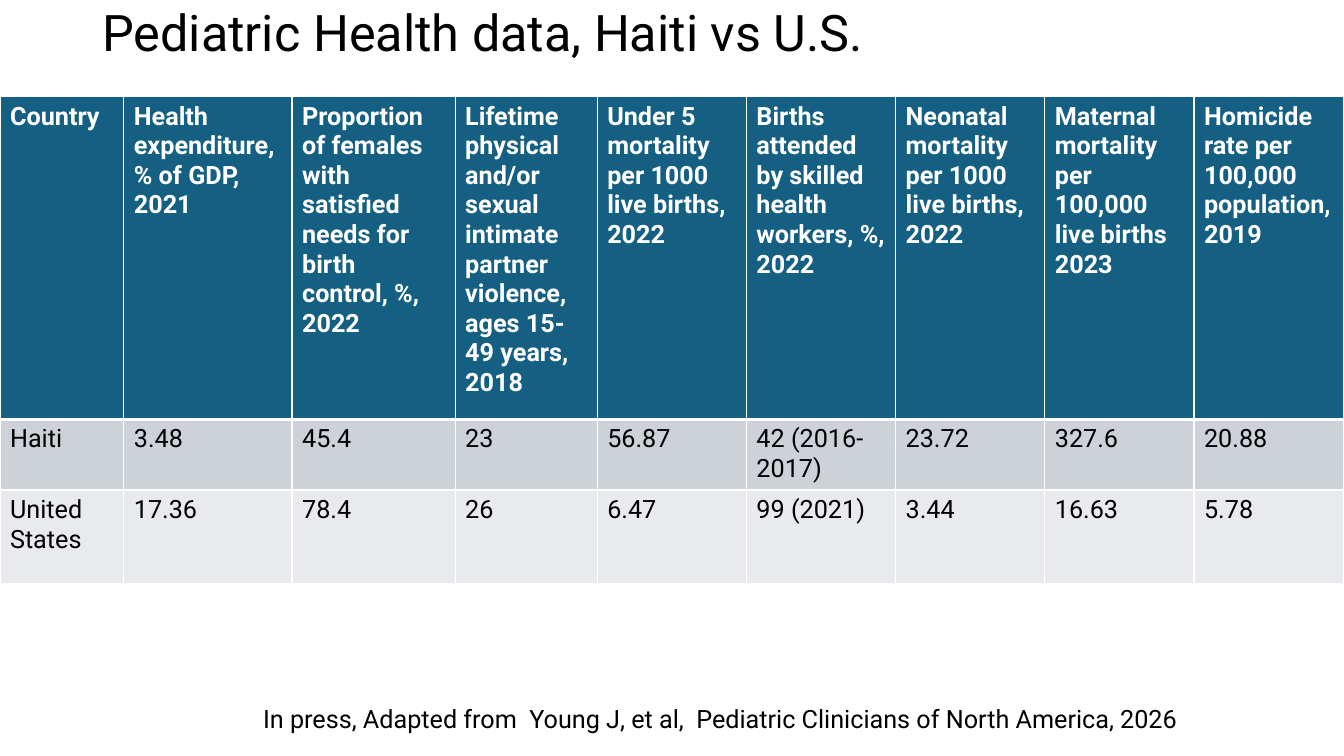
from lxml.etree import SubElement
from pptx import Presentation
from pptx.dml.color import RGBColor
from pptx.enum.text import MSO_ANCHOR
from pptx.oxml.ns import qn
from pptx.util import Cm, Pt

FONT = "Roboto"
BLACK, WHITE = "000000", "FFFFFF"
HEADER_FILL = "156082"
COUNTRY_FILLS = ["CCD2D8", "E8EAED"]
COLUMN_WIDTHS = [3.12, 4.24, 4.11, 3.58] + [3.76] * 5
ROW_HEIGHTS = [8.13, 1.37, 2.36]
INDICATORS = [
    "Country",
    "Health expenditure, % of GDP, 2021",
    "Proportion of females with satisfied needs for birth control, %, 2022",
    "Lifetime physical and/or sexual intimate partner violence, ages 15-49 years, 2018",
    "Under 5 mortality per 1000 live births, 2022",
    "Births attended by skilled health workers, %, 2022",
    "Neonatal mortality per 1000 live births, 2022",
    "Maternal mortality per 100,000 live births 2023",
    "Homicide rate per 100,000 population, 2019",
]
COUNTRIES = [
    ["Haiti", "3.48", "45.4", "23", "56.87", "42 (2016-2017)", "23.72", "327.6", "20.88"],
    ["United States", "17.36", "78.4", "26", "6.47", "99 (2021)", "3.44", "16.63", "5.78"],
]


def rgb(value):
    """Return the colour for a hex string."""
    return RGBColor.from_string(value)


def style(paragraph, size, color, bold=False):
    """Set the font of a whole paragraph."""
    font = paragraph.font
    font.name, font.size, font.bold = FONT, Pt(size), bold
    font.color.rgb = rgb(color)


def add_text(slide, text, left, top, width, height, size, anchor=MSO_ANCHOR.TOP, spacing=1.0):
    """Add a wrapped one-paragraph text box."""
    frame = slide.shapes.add_textbox(Cm(left), Cm(top), Cm(width), Cm(height)).text_frame
    frame.word_wrap = True
    frame.vertical_anchor = anchor
    paragraph = frame.paragraphs[0]
    paragraph.text = text
    paragraph.line_spacing = spacing
    style(paragraph, size, BLACK)


def add_borders(cell, top, bottom):
    """Draw white borders, with the given top and bottom weights in points."""
    properties = cell._tc.get_or_add_tcPr()
    weights = {"a:lnL": 1, "a:lnR": 1, "a:lnT": top, "a:lnB": bottom}
    for position, (side, weight) in enumerate(weights.items()):
        border = SubElement(properties, qn(side), w=str(Pt(weight)))
        SubElement(SubElement(border, qn("a:solidFill")), qn("a:srgbClr"), val=WHITE)
        properties.insert(position, border)


def fill_row(table, row, texts, fill, color, bold=False, top=1, bottom=1):
    """Write and style one table row."""
    for column, text in enumerate(texts):
        cell = table.cell(row, column)
        cell.text = text
        cell.fill.solid()
        cell.fill.fore_color.rgb = rgb(fill)
        add_borders(cell, top, bottom)
        style(cell.text_frame.paragraphs[0], 18, color, bold)


def add_health_table(slide):
    """Add the table that compares the two countries."""
    table = slide.shapes.add_table(
        len(ROW_HEIGHTS), len(COLUMN_WIDTHS),
        Cm(0), Cm(2.44), Cm(sum(COLUMN_WIDTHS)), Cm(sum(ROW_HEIGHTS)),
    ).table
    for column, width in zip(table.columns, COLUMN_WIDTHS):
        column.width = Cm(width)
    for row, height in zip(table.rows, ROW_HEIGHTS):
        row.height = Cm(height)
    fill_row(table, 0, INDICATORS, HEADER_FILL, WHITE, bold=True, bottom=3)
    for row, (values, fill) in enumerate(zip(COUNTRIES, COUNTRY_FILLS), start=1):
        fill_row(table, row, values, fill, BLACK, top=3 if row == 1 else 1)


def main():
    """Build and save the slide."""
    presentation = Presentation()
    presentation.slide_width, presentation.slide_height = Cm(33.87), Cm(19.05)
    slide = presentation.slides.add_slide(presentation.slide_layouts[6])
    add_text(slide, "Pediatric Health data, Haiti vs U.S.",
             2.33, -0.94, 29.21, 3.68, 36, MSO_ANCHOR.MIDDLE, 0.9)
    add_health_table(slide)
    add_text(slide, "In press, Adapted from  Young J, et al,  Pediatric Clinicians of North America, 2026",
             6.38, 17.6, 24.18, 1.02, 18)
    presentation.save("out.pptx")


if __name__ == "__main__":
    main()
